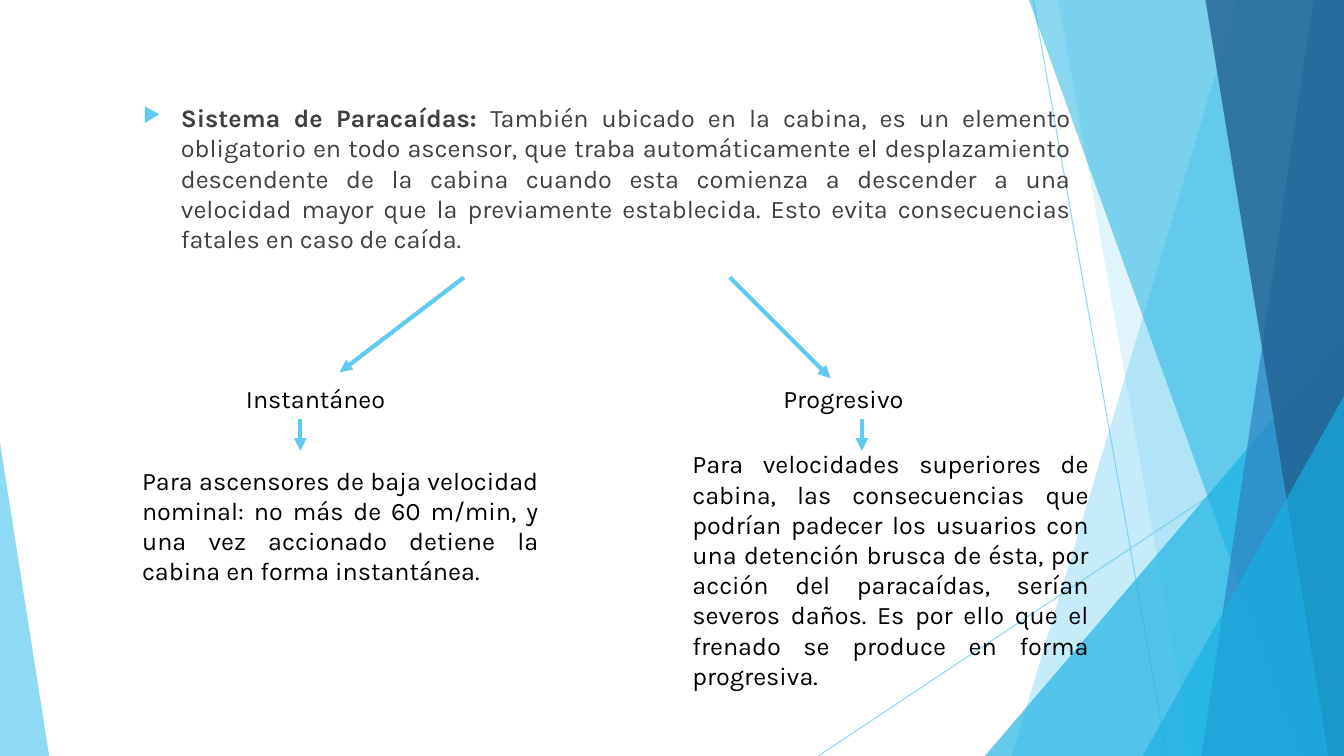
from collections import namedtuple

from lxml import etree
from pptx import Presentation
from pptx import util as u
from pptx.dml.color import RGBColor
from pptx.enum import shapes, text
from pptx.oxml import ns

Box = namedtuple("Box", "left top width height")

COLORS = {"sky": "5FCBEF", "cyan": "17B0E4", "blue": "2E83C3", "navy": "226292",
          "body": "404040", "black": "000000"}
FONT = {"name": "Karla", "size": u.Pt(18)}
FRAME = {"word_wrap": True, "auto_size": text.MSO_AUTO_SIZE.NONE,
         "vertical_anchor": text.MSO_ANCHOR.TOP}
PAGE = Box(0, 0, 33.87, 19.05)


def apply(target, values):
    for name, value in values.items():
        setattr(target, name, value)


def paint(form, color, opacity=100):
    """Set a solid colour on a fill, with opacity in percent."""
    form.solid()
    form.fore_color.rgb = RGBColor.from_string(COLORS[color])
    if opacity < 100:
        tone = form._xPr.find(".//" + ns.qn("a:srgbClr"))
        etree.SubElement(tone, ns.qn("a:alpha")).set("val", str(opacity * 1000))


def add_line(page, start, end, weight, opacity=100, arrow=False):
    line = page.shapes.add_connector(shapes.MSO_CONNECTOR.STRAIGHT,
                                     *map(u.Cm, (*start, *end)))
    line.line.width = u.Pt(weight)
    paint(line.line.fill, "sky", opacity)
    if arrow:
        outline = line.line._get_or_add_ln()
        etree.SubElement(outline, ns.qn("a:tailEnd")).set("type", "triangle")
    etree.SubElement(line._element.spPr, ns.qn("a:effectLst"))


def finish_facet(facet, color, opacity):
    facet.shadow.inherit = False
    paint(facet.fill, color, opacity)
    facet.line.fill.background()


def add_band(page, box, top_x, bottom_x, color, opacity):
    """Slanted band that reaches the right edge of the box."""
    right, bottom = box.left + box.width, box.top + box.height
    corners = [(box.left + top_x, box.top), (right, box.top),
               (right, bottom), (box.left + bottom_x, bottom)]
    points = [(u.Cm(x), u.Cm(y)) for x, y in corners]
    outline = page.shapes.build_freeform(*points[0])
    outline.add_line_segments(points[1:], close=True)
    finish_facet(outline.convert_to_shape(), color, opacity)


def add_corner(page, box, apex, color, opacity):
    """Right triangle with its apex at the left (0) or right (1) end."""
    corner = page.shapes.add_shape(shapes.MSO_SHAPE.ISOSCELES_TRIANGLE, *map(u.Cm, box))
    corner.adjustments[0] = apex
    finish_facet(corner, color, opacity)


def add_text(page, box, spans, color, align=None):
    """Text box with one paragraph of (wording, bold) spans."""
    frame = page.shapes.add_textbox(*map(u.Cm, box)).text_frame
    apply(frame, FRAME)
    para = frame.paragraphs[0]
    para.alignment = align
    for wording, bold in spans:
        span = para.add_run()
        span.text = wording
        apply(span.font, {**FONT, "bold": bold})
        span.font.color.rgb = RGBColor.from_string(COLORS[color])
    return para


def add_bullet(para, indent):
    props = para._p.get_or_add_pPr()
    props.set("marL", str(u.Cm(indent)))
    props.set("indent", str(-u.Cm(indent)))
    tone = etree.SubElement(props, ns.qn("a:buClr"))
    etree.SubElement(tone, ns.qn("a:srgbClr")).set("val", COLORS["sky"])
    for tag, name, value in (("a:buSzPct", "val", "80000"),
                             ("a:buFont", "typeface", "Wingdings 3"),
                             ("a:buChar", "char", "▶")):
        if tag != "a:buFont":
            etree.SubElement(props, ns.qn(tag)).set(name, value)


def draw_backdrop(page, box):
    right, bottom = box.left + box.width, box.top + box.height

    def corner(width, height):
        return Box(right - width, bottom - height, width, height)

    # Thin lines
    add_line(page, (box.left + 26.04, box.top), (box.left + 29.41, bottom), 0.75, 70)
    add_line(page, (right, box.top + 10.24), (box.left + 20.62, bottom), 0.75, 70)
    # Bands and corners, from back to front
    add_band(page, box, 31.19, 25.5, "sky", 36)
    add_band(page, box, 26.67, 30.05, "sky", 20)
    add_corner(page, corner(9.05, 10.59), 1, "cyan", 66)
    add_band(page, box, 25.93, 32.79, "cyan", 50)
    add_band(page, box, 33.1, 30.28, "blue", 70)
    add_band(page, box, 30.38, 33.48, "navy", 80)
    add_corner(page, corner(5.07, 9.07), 1, "cyan", 66)
    add_corner(page, Box(box.left, bottom - 7.9, 1.24, 7.9), 0, "sky", 70)


def draw_definition(page, box):
    spans = [("Sistema de Paracaídas: ", True),
             ("También ubicado en la cabina, es un elemento obligatorio en todo ascensor, "
              "que traba automáticamente el desplazamiento descendente de la cabina cuando "
              "esta comienza a descender a una velocidad mayor que la previamente "
              "establecida. Esto evita consecuencias fatales en caso de caída.", False)]
    para = add_text(page, box, spans, "body", text.PP_ALIGN.JUSTIFY)
    add_bullet(para, 0.95)


def draw_branch(page, box, title, detail, slant, title_x, stem_x, detail_y):
    """Slanted arrow, title, short arrow and detail, from top to bottom."""
    def at(x, y):
        return box.left + x, box.top + y

    start_x, end_x, end_y = slant
    add_line(page, at(start_x, 0), at(end_x, end_y), 3, arrow=True)
    add_text(page, Box(*at(title_x, 2.54), 6.2, 1.02), [(title, False)], "black")
    add_line(page, at(stem_x, 3.56), at(stem_x, 4.37), 3, arrow=True)
    add_text(page, Box(*at(0, detail_y), box.width, box.height - detail_y),
             [(detail, False)], "black", text.PP_ALIGN.JUSTIFY)


def main():
    deck = Presentation()
    deck.slide_width, deck.slide_height = u.Cm(PAGE.width), u.Cm(PAGE.height)
    page = deck.slides.add_slide(deck.slide_layouts[6])

    draw_backdrop(page, PAGE)
    draw_definition(page, Box(3.36, 2.46, 23.87, 4.1))
    draw_branch(page, Box(3.33, 6.99, 10.49, 7.92), "Instantáneo",
                "Para ascensores de baja velocidad nominal: no más de 60 m/min, y una vez "
                "accionado detiene la cabina en forma instantánea.",
                slant=(8.36, 5.23, 2.39), title_x=2.62, stem_x=4.24, detail_y=4.6)
    draw_branch(page, Box(17.2, 6.99, 10.49, 10.59), "Progresivo",
                "Para velocidades superiores de cabina, las consecuencias que podrían padecer "
                "los usuarios con una detención brusca de ésta, por acción del paracaídas, "
                "serían severos daños. Es por ello que el frenado se produce en forma "
                "progresiva.",
                slant=(1.19, 3.73, 2.54), title_x=2.29, stem_x=4.52, detail_y=4.19)
    deck.save("out.pptx")


if __name__ == "__main__":
    main()
